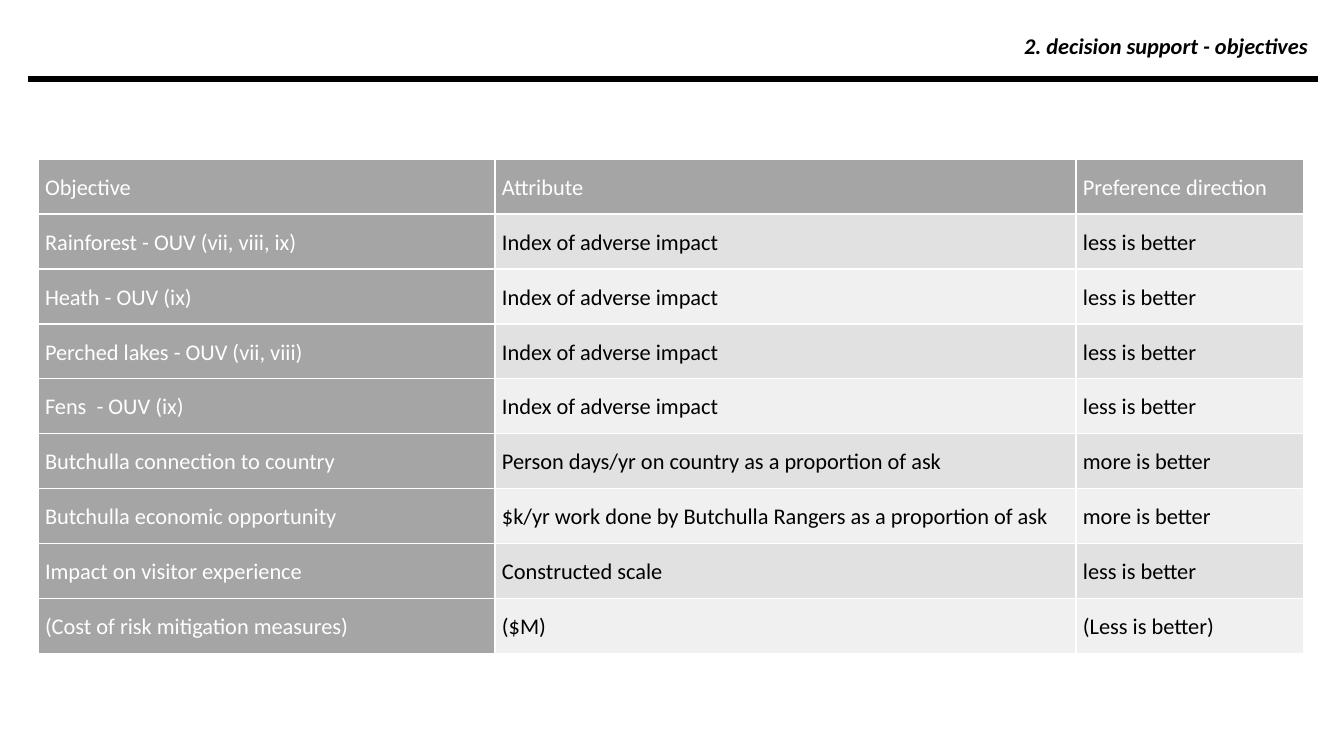
from lxml.etree import SubElement
from pptx import Presentation
from pptx.dml.color import RGBColor
from pptx.enum.shapes import MSO_CONNECTOR
from pptx.enum.text import MSO_ANCHOR, PP_ALIGN
from pptx.oxml.ns import qn
from pptx.util import Pt

COLOURS = {
    "black": "000000",
    "white": "FFFFFF",
    "heading": "A5A5A5",
    "band_dark": "E1E1E1",
    "band_light": "F0F0F0",
}

OBJECTIVES = [
    ("Objective", "Attribute", "Preference direction"),
    ("Rainforest - OUV (vii, viii, ix)", "Index of adverse impact", "less is better"),
    ("Heath - OUV (ix)", "Index of adverse impact", "less is better"),
    ("Perched lakes - OUV (vii, viii)", "Index of adverse impact", "less is better"),
    ("Fens  - OUV (ix)", "Index of adverse impact", "less is better"),
    ("Butchulla connection to country",
     "Person days/yr on country as a proportion of ask", "more is better"),
    ("Butchulla economic opportunity",
     "$k/yr work done by Butchulla Rangers as a proportion of ask", "more is better"),
    ("Impact on visitor experience", "Constructed scale", "less is better"),
    ("(Cost of risk mitigation measures)", "($M)", "(Less is better)"),
]


def px(length):
    return round(length * 914400 / 100.8)


def rgb(name):
    return RGBColor.from_string(COLOURS[name])


class SlideBuilder:
    font_name = "Calibri"
    font_size = 16
    cell_margin = 7
    border_width = 1

    def __init__(self, presentation):
        self.slide = presentation.slides.add_slide(presentation.slide_layouts[6])

    def format_runs(self, paragraph, colour, bold=False, italic=False):
        for run in paragraph.runs:
            run.font.name = self.font_name
            run.font.size = Pt(self.font_size)
            run.font.bold = bold
            run.font.italic = italic
            run.font.color.rgb = rgb(colour)

    def rule(self, left, right, y, width):
        connector = self.slide.shapes.add_connector(
            MSO_CONNECTOR.STRAIGHT, px(left), px(y), px(right), px(y))
        connector.line.color.rgb = rgb("black")
        connector.line.width = Pt(width)
        SubElement(connector._element.spPr, qn("a:effectLst"))

    def title(self, left, top, width, height, text):
        shape = self.slide.shapes.add_textbox(px(left), px(top), px(width), px(height))
        shape.text_frame.word_wrap = True
        shape.text_frame.text = text
        paragraph = shape.text_frame.paragraphs[0]
        paragraph.alignment = PP_ALIGN.RIGHT
        self.format_runs(paragraph, "black", bold=True, italic=True)

    def border(self, cell):
        properties = cell._tc.get_or_add_tcPr()
        for side in ("lnL", "lnR", "lnT", "lnB"):
            line = SubElement(properties, qn(f"a:{side}"), w=str(Pt(self.border_width)))
            fill = SubElement(line, qn("a:solidFill"))
            SubElement(fill, qn("a:srgbClr"), val=COLOURS["white"])

    def cell(self, cell, text, fill, colour):
        self.border(cell)
        cell.fill.solid()
        cell.fill.fore_color.rgb = rgb(fill)
        cell.vertical_anchor = MSO_ANCHOR.MIDDLE
        cell.margin_left = cell.margin_right = px(self.cell_margin)
        cell.margin_top = cell.margin_bottom = 0
        cell.text_frame.text = text
        paragraph = cell.text_frame.paragraphs[0]
        paragraph.line_spacing = 1.07
        self.format_runs(paragraph, colour)

    def table(self, left, top, column_widths, row_height, rows):
        table = self.slide.shapes.add_table(
            len(rows), len(column_widths), px(left), px(top),
            px(sum(column_widths)), px(row_height * len(rows))).table
        table.first_row = True
        table.first_col = True
        table.horz_banding = False
        for column, width in zip(table.columns, column_widths):
            column.width = px(width)
        for row_index, texts in enumerate(rows):
            table.rows[row_index].height = px(row_height)
            band = "band_dark" if row_index % 2 else "band_light"
            for column_index, text in enumerate(texts):
                is_heading = row_index == 0 or column_index == 0
                self.cell(table.cell(row_index, column_index), text,
                          "heading" if is_heading else band,
                          "white" if is_heading else "black")


def main():
    presentation = Presentation()
    presentation.slide_width = px(1344)
    presentation.slide_height = px(756)
    builder = SlideBuilder(presentation)
    builder.rule(28, 1318, 79, 3.75)
    builder.title(247, 27, 1071, 37, "2. decision support - objectives")
    builder.table(38, 159, (457, 581, 228), 55, OBJECTIVES)
    presentation.save("out.pptx")


if __name__ == "__main__":
    main()
